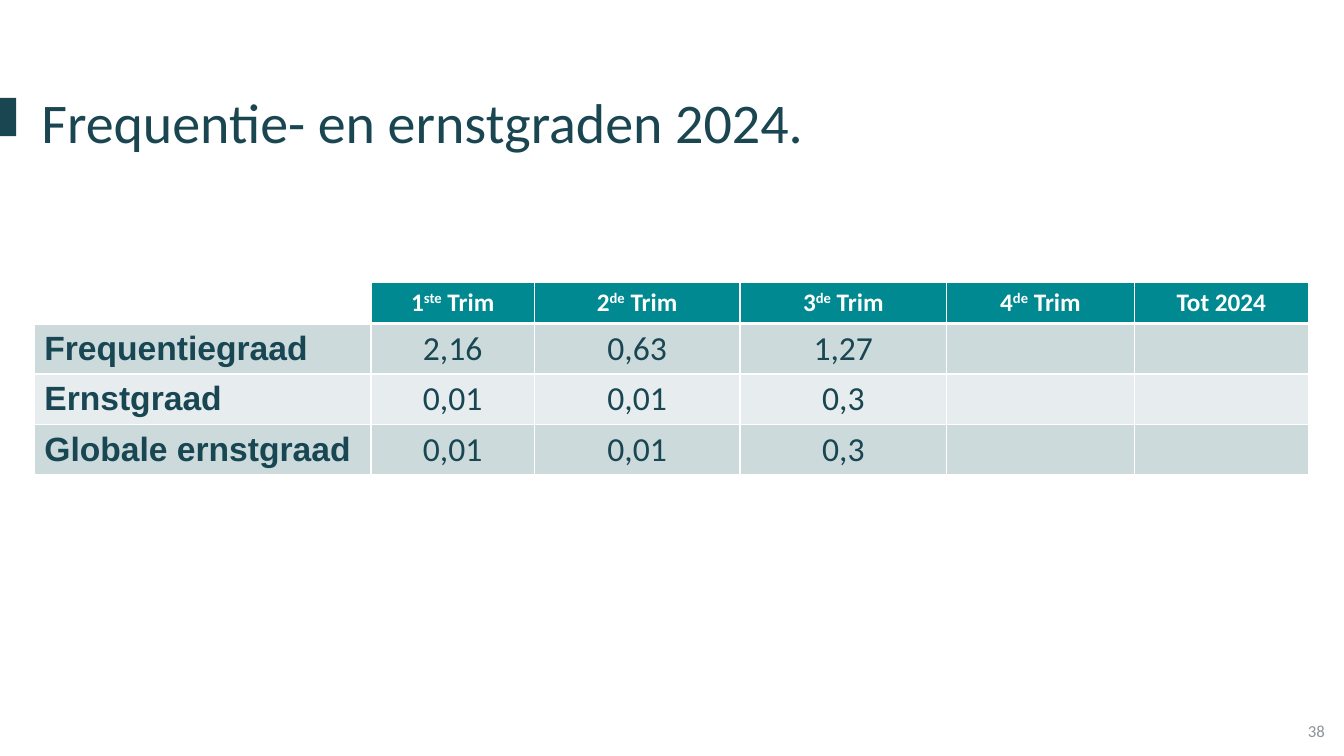
"""Build the slide with the frequency and severity rates of 2024."""
from lxml.etree import SubElement
from pptx import Presentation
from pptx.dml.color import RGBColor
from pptx.enum.shapes import MSO_SHAPE
from pptx.enum.text import MSO_ANCHOR, MSO_AUTO_SIZE, PP_ALIGN
from pptx.oxml.ns import qn
from pptx.util import Inches, Pt

COLORS = {name: RGBColor.from_string(value) for name, value in {
    "title": "1A4652", "text": "184652", "header": "008991", "odd": "CCDADC",
    "even": "E7EDEE", "white": "FFFFFF", "number": "8C9498"}.items()}
HEADERS = [("1", "ste", " Trim"), ("2", "de", " Trim"), ("3", "de", " Trim"),
           ("4", "de", " Trim"), ("Tot 2024",)]
RATES = [("Frequentiegraad", "2,16", "0,63", "1,27", "", ""),
         ("Ernstgraad", "0,01", "0,01", "0,3", "", ""),
         ("Globale ernstgraad", "0,01", "0,01", "0,3", "", "")]
COLUMN_WIDTHS = [3.34, 1.62, 2.04, 2.05, 1.86, 1.73]
ROW_HEIGHTS = [0.41] + [0.5] * len(RATES)


def style(run, size, color, font="Calibri", bold=False):
    """Format one run."""
    run.font.size, run.font.name, run.font.bold = Pt(size), font, bold
    run.font.color.rgb = COLORS[color]


def add_borders(cell, bottom):
    """Draw white cell borders, with the bottom one in its own width."""
    properties = cell._tc.get_or_add_tcPr()
    for side, width in (("L", 1), ("R", 1), ("T", 1), ("B", bottom)):
        border = SubElement(properties, qn(f"a:ln{side}"), w=str(Pt(width)))
        fill = SubElement(border, qn("a:solidFill"))
        SubElement(fill, qn("a:srgbClr"), val=str(COLORS["white"]))


prs = Presentation()
prs.slide_width, prs.slide_height = Inches(13.33), Inches(7.5)
slide = prs.slides.add_slide(prs.slide_layouts[5])

accent = slide.shapes.add_shape(
    MSO_SHAPE.RECTANGLE, 0, Inches(0.97), Inches(0.16), Inches(0.38))
accent.shadow.inherit = False
accent.fill.solid()
accent.fill.fore_color.rgb = COLORS["title"]
accent.line.fill.background()

heading = slide.shapes.title
heading.left, heading.top = Inches(0.31), Inches(0.82)
heading.width, heading.height = Inches(12.35), Inches(0.77)
heading.text_frame.text = "Frequentie- en ernstgraden 2024."
heading.text_frame.auto_size = MSO_AUTO_SIZE.NONE
heading.text_frame.vertical_anchor = MSO_ANCHOR.TOP
heading.text_frame.paragraphs[0].alignment = PP_ALIGN.LEFT
style(heading.text_frame.paragraphs[0].runs[0], 40, "title")

page_number = slide.shapes.add_textbox(
    Inches(10.24), Inches(7.05), Inches(3), Inches(0.4)).text_frame
page_number.word_wrap = True
page_number.vertical_anchor = MSO_ANCHOR.MIDDLE
page_number.text = "38"
page_number.paragraphs[0].alignment = PP_ALIGN.RIGHT
style(page_number.paragraphs[0].runs[0], 12, "number")

rates = slide.shapes.add_table(
    len(ROW_HEIGHTS), len(COLUMN_WIDTHS), Inches(0.34), Inches(2.8),
    Inches(sum(COLUMN_WIDTHS)), Inches(sum(ROW_HEIGHTS))).table
rates.first_row = rates.horz_banding = False
for column, width in zip(rates.columns, COLUMN_WIDTHS):
    column.width = Inches(width)
for row, height in zip(rates.rows, ROW_HEIGHTS):
    row.height = Inches(height)

for r, row in enumerate(rates.rows):
    for c, cell in enumerate(row.cells):
        add_borders(cell, 1 if r else 3)
        cell.vertical_anchor = MSO_ANCHOR.MIDDLE
        if r == c == 0:
            cell.fill.background()
            continue
        cell.fill.solid()
        band = "odd" if r % 2 else "even"
        cell.fill.fore_color.rgb = COLORS[band if r else "header"]
        paragraph = cell.text_frame.paragraphs[0]
        paragraph.alignment = PP_ALIGN.CENTER if c else PP_ALIGN.LEFT
        if r == 0:
            for part, words in enumerate(HEADERS[c - 1]):
                run = paragraph.add_run()
                run.text = words
                style(run, 18, "white", bold=True)
                if part == 1:
                    run._r.get_or_add_rPr().set("baseline", "30000")
        elif RATES[r - 1][c]:
            paragraph.text = RATES[r - 1][c]
            style(paragraph.runs[0], 24, "text",
                  font="Calibri" if c else "Arial", bold=c == 0)

prs.save("out.pptx")
